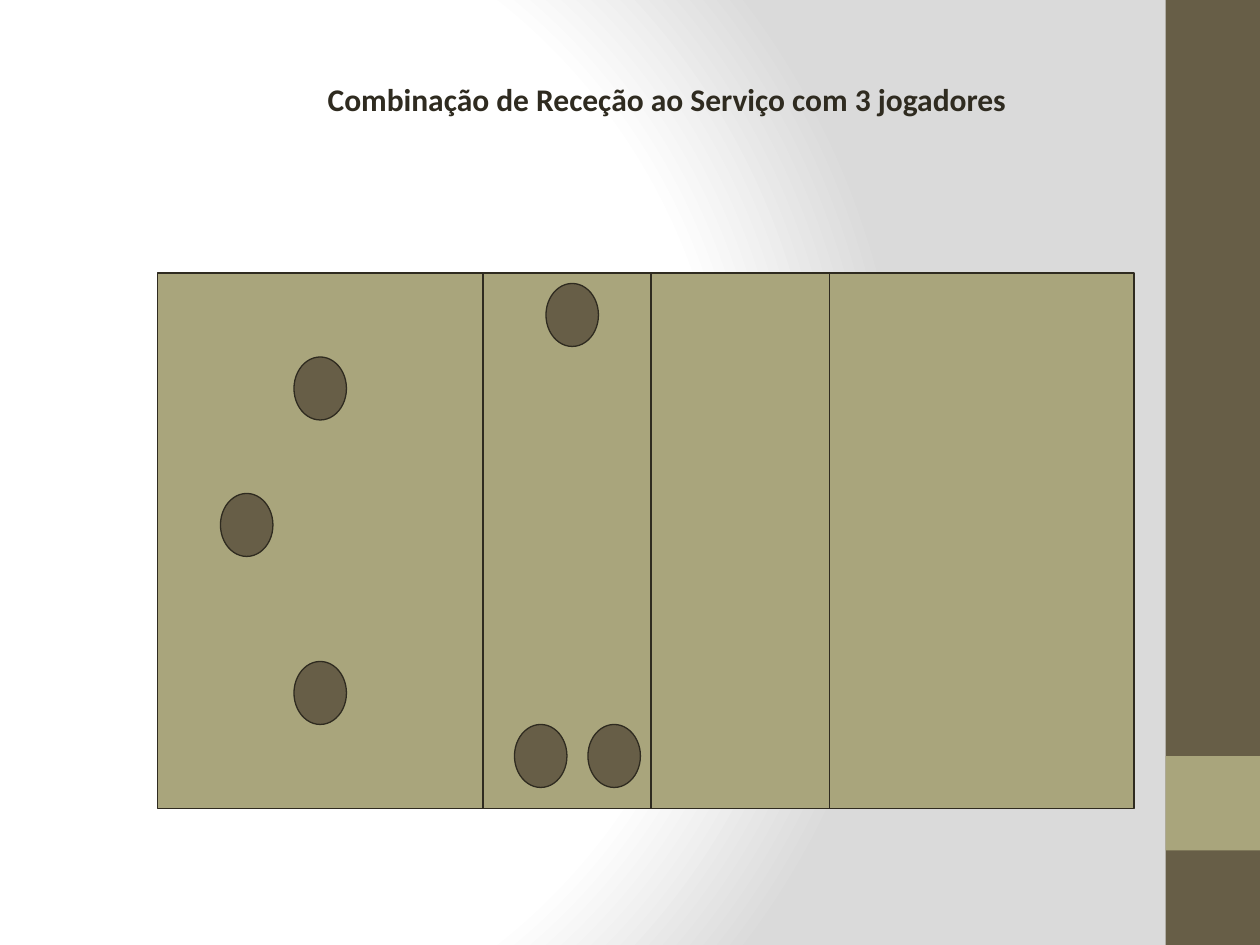
from dataclasses import dataclass

from lxml import etree
from pptx import Presentation
from pptx.dml.color import RGBColor
from pptx.enum import shapes, text
from pptx.oxml.ns import qn
from pptx.util import Pt


@dataclass(frozen=True)
class Theme:
    dark: RGBColor = RGBColor.from_string("675E47")
    light: RGBColor = RGBColor.from_string("A9A57C")
    ink: RGBColor = RGBColor.from_string("2F2B20")
    background_stops: tuple = ((0, "FFFFFF"), (75, "FFFFFF"), (100, "DADADA"))
    font: str = "Calibri"
    title_size: float = 18
    line_width: float = 0.75


THEME = Theme()
RECTANGLE = shapes.MSO_SHAPE.RECTANGLE
OVAL = shapes.MSO_SHAPE.OVAL

# Points from the court's top left corner
COURT_LINES = (186, 282, 384)
PLAYER_SIZE = (30, 36)
PLAYERS = ((204, 258), (222, 6), (78, 48), (246, 258), (78, 222), (36, 126))


def add_figure(slide, kind, left, top, width, height, fill, outlined=True):
    shape = slide.shapes.add_shape(kind, Pt(left), Pt(top), Pt(width), Pt(height))
    shape.shadow.inherit = False
    shape.fill.solid()
    shape.fill.fore_color.rgb = fill
    if outlined:
        shape.line.color.rgb = THEME.ink
        shape.line.width = Pt(THEME.line_width)
    else:
        shape.line.fill.background()


def set_background(slide):
    """Circular gradient, centred a fifth of the way across the slide."""
    slide.background.fill.gradient()
    gradient = slide.element.find(".//" + qn("a:gradFill"))
    for child in list(gradient):
        gradient.remove(child)
    stops = etree.SubElement(gradient, qn("a:gsLst"))
    for position, color in THEME.background_stops:
        stop = etree.SubElement(stops, qn("a:gs"), pos=str(position * 1000))
        etree.SubElement(stop, qn("a:srgbClr"), val=color)
    circle = etree.SubElement(gradient, qn("a:path"), path="circle")
    etree.SubElement(circle, qn("a:fillToRect"),
                     l="20000", t="50000", r="100000", b="50000")


def add_side_band(slide, left, top, width, height):
    add_figure(slide, RECTANGLE, left, top, width, height, THEME.dark, False)
    add_figure(slide, RECTANGLE, left, top + 0.8 * height, width, width,
               THEME.light, False)


def add_title(slide, left, top, width, height, wording):
    title = slide.shapes.title
    title.left, title.top = Pt(left), Pt(top)
    title.width, title.height = Pt(width), Pt(height)
    frame = title.text_frame
    frame.text = wording
    frame.word_wrap = False
    frame.auto_size = text.MSO_AUTO_SIZE.SHAPE_TO_FIT_TEXT
    frame.vertical_anchor = text.MSO_ANCHOR.TOP
    paragraph = frame.paragraphs[0]
    paragraph.alignment = text.PP_ALIGN.LEFT
    font = paragraph.runs[0].font
    font.name = THEME.font
    font.size = Pt(THEME.title_size)
    font.bold = True
    font.color.rgb = THEME.ink


def add_court_line(slide, x, top, bottom):
    line = slide.shapes.add_connector(
        shapes.MSO_CONNECTOR.STRAIGHT, Pt(x), Pt(top), Pt(x), Pt(bottom))
    line.line.color.rgb = THEME.ink
    line.line.width = Pt(THEME.line_width)
    etree.SubElement(line.element.spPr, qn("a:effectLst"))


def add_court(slide, left, top, width, height):
    add_figure(slide, RECTANGLE, left, top, width, height, THEME.light)
    for x, y in PLAYERS:
        add_figure(slide, OVAL, left + x, top + y, *PLAYER_SIZE, THEME.dark)
    for x in COURT_LINES:
        add_court_line(slide, left + x, top, top + height)


def main():
    presentation = Presentation()
    presentation.slide_width, presentation.slide_height = Pt(720), Pt(540)
    slide = presentation.slides.add_slide(presentation.slide_layouts[5])
    set_background(slide)
    add_side_band(slide, 666, 0, 54, 540)
    add_title(slide, 180, 42, 405, 29,
              "Combinação de Receção ao Serviço com 3 jogadores")
    add_court(slide, 90, 156, 558, 306)
    presentation.save("out.pptx")


if __name__ == "__main__":
    main()
